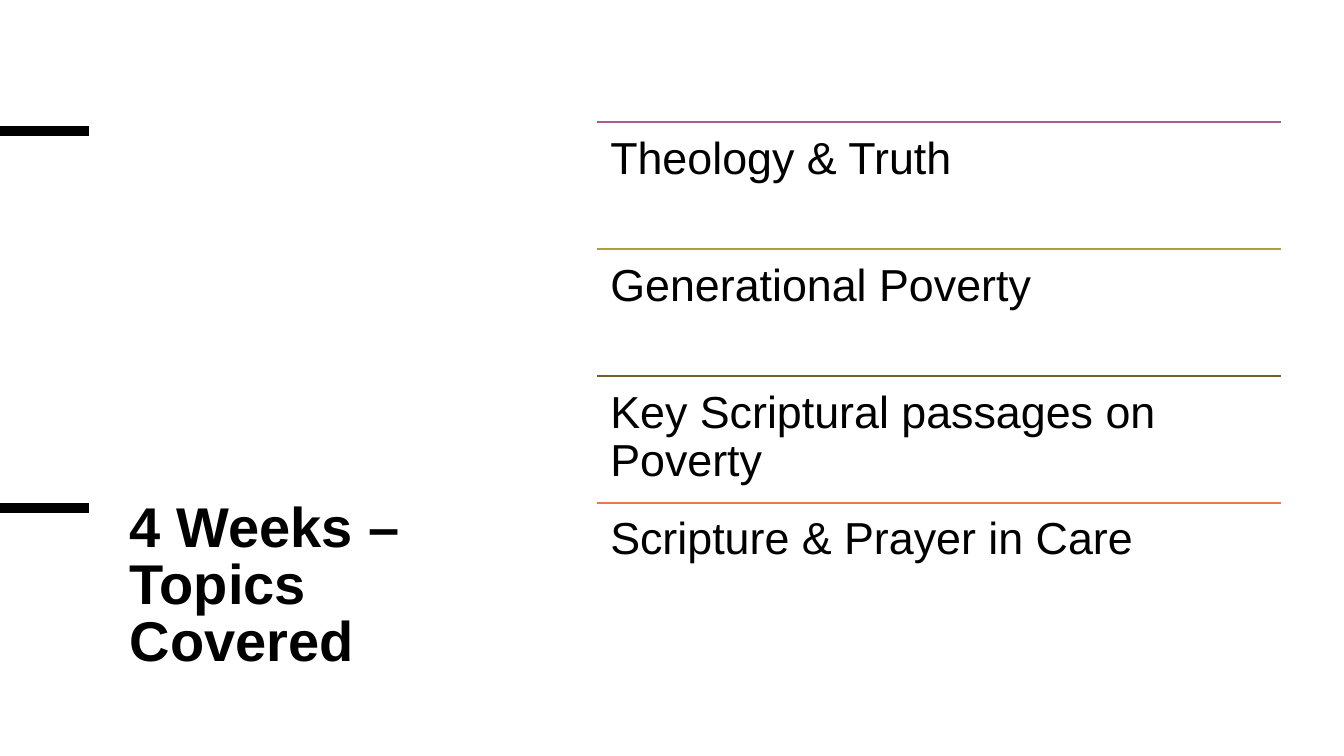
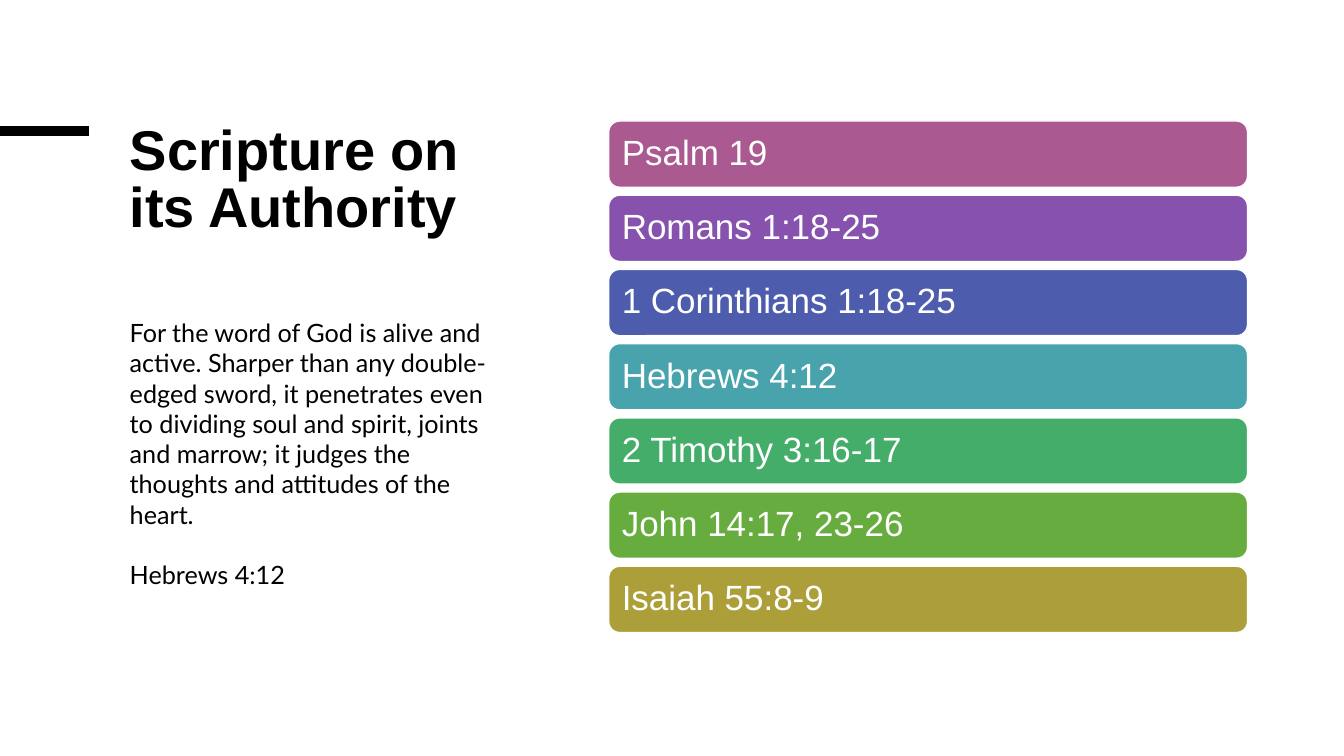
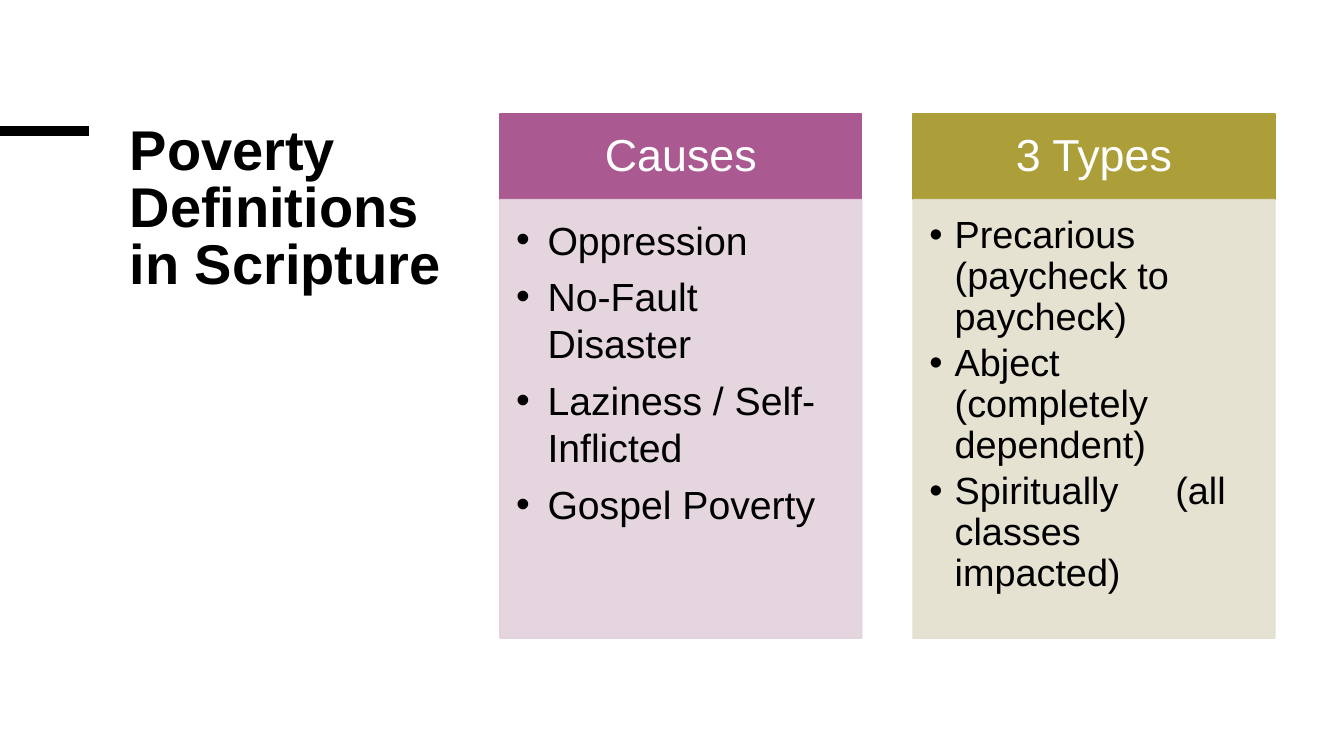
"""Build three slides on Scripture and poverty."""
from dataclasses import dataclass

from lxml import etree
from pptx import Presentation
from pptx.dml.color import RGBColor
from pptx.enum.shapes import MSO_CONNECTOR, MSO_SHAPE
from pptx.enum.text import MSO_ANCHOR, PP_ALIGN
from pptx.oxml.ns import qn
from pptx.util import Cm, Pt

LINE = MSO_CONNECTOR.STRAIGHT
RECT, ROUND = MSO_SHAPE.RECTANGLE, MSO_SHAPE.ROUNDED_RECTANGLE
TOP, MID = MSO_ANCHOR.TOP, MSO_ANCHOR.MIDDLE
LEFT, MIDDLE = PP_ALIGN.LEFT, PP_ALIGN.CENTER


@dataclass(frozen=True)
class Theme:
    """Hold the shared colours, fonts and type sizes."""
    ink: str = "000000"
    paper: str = "FFFFFF"
    plum: str = "AB5991"
    gold: str = "AC9F39"
    font: str = "Arial"
    serif: str = "Lato"
    title: int = 40
    head: int = 32
    card: int = 25
    verse: int = 18


T = Theme()

TOPICS = [
    ("Theology & Truth", T.plum),
    ("Generational Poverty", T.gold),
    ("Key Scriptural passages on Poverty", "756029"),
    ("Scripture & Prayer in Care", "E87850"),
]
CARDS = [
    ("Psalm 19", T.plum),
    ("Romans 1:18-25", "8752AD"),
    ("1 Corinthians 1:18-25", "4D5CAD"),
    ("Hebrews 4:12", "48A3AD"),
    ("2 Timothy 3:16-17", "43AD69"),
    ("John 14:17, 23-26", "67AC3E"),
    ("Isaiah 55:8-9", T.gold),
]
VERSE = (
    "For the word of God is alive and active. Sharper than any double-edged "
    "sword, it penetrates even to dividing soul and spirit, joints and marrow; "
    "it judges the thoughts and attitudes of the heart."
)
SOURCE = "Hebrews 4:12"
COLUMNS = [
    dict(head="Causes", dark=T.plum, pale="E2D1DC", size=28, dent=0.79,
         lead=1.0, after=7, pad=(0.41, 0.41, 0.56, 0.61),
         items=["Oppression", "No-Fault Disaster",
                "Laziness / Self-Inflicted", "Gospel Poverty"]),
    dict(head="3 Types", dark=T.gold, pale="E3DFCE", size=27, dent=0.64,
         lead=0.9, after=4, pad=(0.41, 0.41, 0.53, 0.61),
         items=["Precarious (paycheck to paycheck)",
                "Abject (completely dependent)",
                "Spiritually\t(all classes impacted)"]),
]


def rgb(code):
    """Turn a hex code into a colour."""
    return RGBColor.from_string(code)


def rule(slide, left, top, width, color, weight):
    """Draw a level line."""
    line = slide.shapes.add_connector(
        LINE, Cm(left), Cm(top), Cm(left + width), Cm(top))
    line.line.color.rgb = rgb(color)
    line.line.width = Pt(weight)
    etree.SubElement(line._element.spPr, qn("a:effectLst"))


def block(slide, kind, box, fill, edge):
    """Add a filled shape with a thin edge."""
    shape = slide.shapes.add_shape(kind, *map(Cm, box))
    shape.shadow.inherit = False
    shape.fill.solid()
    shape.fill.fore_color.rgb = rgb(fill)
    shape.line.color.rgb = rgb(edge)
    shape.line.width = Pt(1)
    return shape


def write(shape, texts, size, color=T.ink, font=T.font, bold=False, lead=0.9,
          pad=(0.25, 0.13, 0.25, 0.13), anchor=TOP, align=LEFT,
          before=0, after=0):
    """Fill a shape with one paragraph per text."""
    frame = shape.text_frame
    frame.word_wrap = True
    frame.vertical_anchor = anchor
    (frame.margin_left, frame.margin_top,
     frame.margin_right, frame.margin_bottom) = map(Cm, pad)
    for i, text in enumerate(texts):
        para = frame.add_paragraph() if i else frame.paragraphs[0]
        para.alignment = align
        para.line_spacing = lead
        para.space_before = Pt(before if i else 0)
        para.space_after = Pt(after)
        run = para.add_run()
        run.text = text
        run.font.name = font
        run.font.size = Pt(size)
        run.font.bold = bold
        run.font.color.rgb = rgb(color)
    return frame.paragraphs


def label(slide, box, texts, size, **style):
    """Add a text box."""
    return write(slide.shapes.add_textbox(*map(Cm, box)), texts, size, **style)


def bullet(para, dent, tab=6.2):
    """Give a paragraph a hanging bullet and a tab stop."""
    props = para._p.get_or_add_pPr()
    props.set("marL", str(Cm(dent)))
    props.set("indent", str(-Cm(dent)))
    etree.SubElement(props, qn("a:buFont"), typeface=T.font)
    etree.SubElement(props, qn("a:buChar"), char="•")
    if "\t" in para.text:
        tabs = etree.SubElement(props, qn("a:tabLst"))
        etree.SubElement(tabs, qn("a:tab"), pos=str(Cm(tab)), algn="l")


def fade(shape, share):
    """Make fill and edge partly clear."""
    for color in shape._element.spPr.iter(qn("a:srgbClr")):
        etree.SubElement(color, qn("a:alpha"), val=str(share * 1000))


def mark(slide, top=3.3):
    """Draw the black bar at the left edge."""
    rule(slide, 0, top, 2.24, T.ink, 6.75)


def start(deck, title, top=3.02):
    """Add a slide with its bar and title."""
    slide = deck.slides.add_slide(deck.slide_layouts[6])
    mark(slide)
    label(slide, (3.02, top, 10.5, 5), title, T.title, bold=True, lead=0.85)
    return slide


def topics(deck):
    """Build the list of topics."""
    slide = start(deck, ["4 Weeks – Topics Covered"], 12.52)
    mark(slide, 12.8)
    left, wide, step = 15.04, 17.25, 3.2
    for i, (text, color) in enumerate(TOPICS):
        top = 3.07 + i * step
        rule(slide, left, top, wide, color, 1)
        label(slide, (left, top, wide, step), [text], T.head, pad=[0.34] * 4)


def cards(deck):
    """Build the verse and its stack of cards."""
    slide = start(deck, ["Scripture on its Authority"])
    for i, (text, color) in enumerate(CARDS):
        box = (15.34, 3.05 + i * 1.87, 16.1, 1.67)
        card = block(slide, ROUND, box, color, T.paper)
        write(card, [text], T.card, T.paper, pad=[0.25] * 4, anchor=MID)
    label(slide, (3.02, 7.87, 9.63, 6.4), [VERSE, SOURCE], T.verse,
          font=T.serif, lead=1.0, before=21.6)


def columns(deck):
    """Build the two headed columns."""
    slide = start(deck, ["Poverty Definitions", "in Scripture"])
    top, wide, tall = 2.87, 9.12, 2.16
    for i, col in enumerate(COLUMNS):
        left = 12.6 + i * 10.41
        head = block(slide, RECT, (left, top, wide, tall),
                     col["dark"], col["dark"])
        write(head, [col["head"]], T.head, T.paper, anchor=MID, align=MIDDLE)
        body = block(slide, RECT, (left, top + tall, wide, 11.05),
                     col["pale"], col["pale"])
        fade(body, 90)
        for para in write(body, col["items"], col["size"], lead=col["lead"],
                          pad=col["pad"], after=col["after"]):
            bullet(para, col["dent"])


def main():
    """Build and save the deck."""
    deck = Presentation()
    deck.slide_width, deck.slide_height = Cm(33.87), Cm(19.05)
    for build in (topics, cards, columns):
        build(deck)
    deck.save("out.pptx")


if __name__ == "__main__":
    main()
